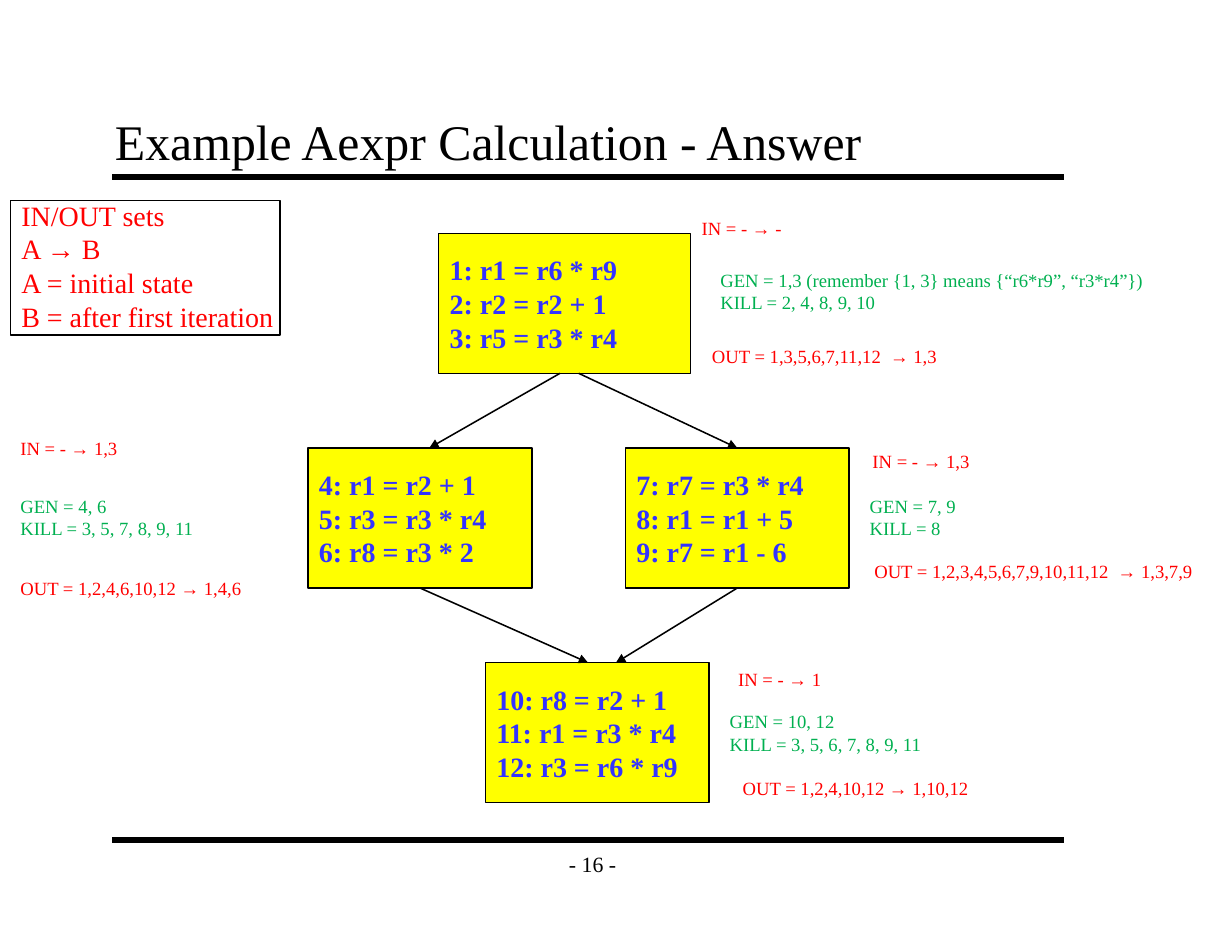
from lxml.etree import SubElement
from pptx import Presentation
from pptx.dml.color import RGBColor
from pptx.enum.shapes import MSO_CONNECTOR as CONN, MSO_SHAPE as SHAPE
from pptx.enum.text import MSO_ANCHOR as ANCHOR, PP_ALIGN as ALIGN
from pptx.oxml.ns import qn
from pptx.util import Inches, Pt

UNIT = Inches(1) / 12
COLS, ROWS = 132, 102
BLACK, RED, GREEN, BLUE, YELLOW = "000000", "FF0000", "00B050", "3333FF", "FFFF00"
LINE_H, PAD_H = 2.4, 1.2

BLOCKS = [
    ((47, 25, 27, 15), ["1: r1 = r6 * r9", "2: r2 = r2 + 1", "3: r5 = r3 * r4"], [
        (27, -2.4, 11, RED, ["IN = - → -"]),
        (29, 3.2, 48.7, GREEN, ["GEN = 1,3 (remember {1, 3} means {“r6*r9”, “r3*r4”})",
                                "KILL = 2, 4, 8, 9, 10"]),
        (28.1, 11.4, 26.8, RED, ["OUT = 1,3,5,6,7,11,12  → 1,3"])]),
    ((33, 48, 24, 15), ["4: r1 = r2 + 1", "5: r3 = r3 * r4", "6: r8 = r3 * 2"], [
        (-32, -1.8, 13.3, RED, ["IN = - → 1,3"]),
        (-32, 4.4, 21.1, GREEN, ["GEN = 4, 6", "KILL = 3, 5, 7, 8, 9, 11"]),
        (-32, 13.2, 26.8, RED, ["OUT = 1,2,4,6,10,12 → 1,4,6"])]),
    ((67, 48, 24, 15), ["7: r7 = r3 * r4", "8: r1 = r1 + 5", "9: r7 = r1 - 6"], [
        (25.3, -0.4, 13.3, RED, ["IN = - → 1,3"]),
        (25, 4.4, 12.1, GREEN, ["GEN = 7, 9", "KILL = 8"]),
        (25.5, 11.4, 36.8, RED, ["OUT = 1,2,3,4,5,6,7,9,10,11,12  → 1,3,7,9"])]),
    ((52, 71, 24, 15), ["10: r8 = r2 + 1", "11: r1 = r3 * r4", "12: r3 = r6 * r9"], [
        (25.9, 0, 11.9, RED, ["IN = - → 1"]),
        (25, 4.5, 23.2, GREEN, ["GEN = 10, 12", "KILL = 3, 5, 6, 7, 8, 9, 11"]),
        (26.4, 11.7, 27.4, RED, ["OUT = 1,2,4,10,12 → 1,10,12"])]),
]
EDGES = [(60, 40, 46, 48), (62, 40, 79, 48), (79, 63, 66, 71), (45, 63, 63, 71)]


def rgb(value):
    """Turn a hex string into a colour."""
    return RGBColor.from_string(value)


def grid(*cells):
    """Turn grid units into lengths."""
    return [round(c * UNIT) for c in cells]


def write(sp, lines, size, color, bold=False, align=ALIGN.LEFT, **frame):
    """Fill a shape with one paragraph per line."""
    tf = sp.text_frame
    for name, value in {"word_wrap": False, **frame}.items():
        setattr(tf, name, value)
    for i, line in enumerate(lines):
        p = tf.paragraphs[0] if i == 0 else tf.add_paragraph()
        p.alignment = align
        r = p.add_run()
        r.text = line
        r.font.color.rgb = rgb(color)
        look = {"name": "Times New Roman", "size": Pt(size), "bold": bold}
        for name, value in look.items():
            setattr(r.font, name, value)


def text(s, box, lines, size, color, **options):
    """Add a text box."""
    write(s.shapes.add_textbox(*grid(*box)), lines, size, color, **options)


def rect(s, box, fill=None):
    """Add a thin-bordered rectangle."""
    sp = s.shapes.add_shape(SHAPE.RECTANGLE, *grid(*box))
    sp.shadow.inherit = False
    if fill:
        sp.fill.solid()
        sp.fill.fore_color.rgb = rgb(fill)
    else:
        sp.fill.background()
    sp.line.color.rgb = rgb(BLACK)
    sp.line.width = Pt(1)
    return sp


def line(s, ends, width, arrow=False):
    """Add a straight line, with an arrowhead if asked."""
    cx = s.shapes.add_connector(CONN.STRAIGHT, *grid(*ends))
    cx.line.color.rgb = rgb(BLACK)
    cx.line.width = Pt(width)
    if arrow:
        SubElement(cx.line._get_or_add_ln(), qn("a:tailEnd"), type="triangle")
    SubElement(cx._element.spPr, qn("a:effectLst"))


def page_frame(s, box, title, number):
    """Place the title, the two rules and the page number."""
    x, y, w, h = box
    pads = dict(zip(("margin_left", "margin_top", "margin_right", "margin_bottom"),
                    (Inches(0.11), Inches(0.06)) * 2))
    for rule_y in (y, y + h):
        line(s, (x, rule_y, x + w, rule_y), 4)
    text(s, (x - 1, y - 8, w, 8), [title], 32, BLACK,
         vertical_anchor=ANCHOR.BOTTOM, **pads)
    text(s, (x + 47, y + h, 9, 5), [number], 14, BLACK, align=ALIGN.CENTER,
         vertical_anchor=ANCHOR.MIDDLE, **pads)


def basic_block(s, box, code, notes):
    """Place a block of code and its data-flow sets."""
    write(rect(s, box, YELLOW), code, 18, BLUE, bold=True,
          vertical_anchor=ANCHOR.MIDDLE)
    for dx, dy, w, color, lines in notes:
        h = PAD_H + LINE_H * len(lines)
        text(s, (box[0] + dx, box[1] + dy, w, h), lines, 12, color)


def legend(s, box, lines):
    """Place the framed key to the sets."""
    x, y, w, h = box
    text(s, (x, y - 0.85, w + 0.85, h + 1.3), lines, 18, RED)
    rect(s, box)


def main():
    """Build the slide."""
    prs = Presentation()
    prs.slide_width, prs.slide_height = grid(COLS, ROWS)
    s = prs.slides.add_slide(prs.slide_layouts[6])
    page_frame(s, (12, 19, 102, 71), "Example Aexpr Calculation - Answer", "- 16 -")
    for box, code, notes in BLOCKS:
        basic_block(s, box, code, notes)
    for ends in EDGES:
        line(s, ends, 1, arrow=True)
    legend(s, (1.1, 21.5, 28.9, 14.4),
           ["IN/OUT sets", "A → B", "A = initial state", "B = after first iteration"])
    prs.save("out.pptx")


if __name__ == "__main__":
    main()
